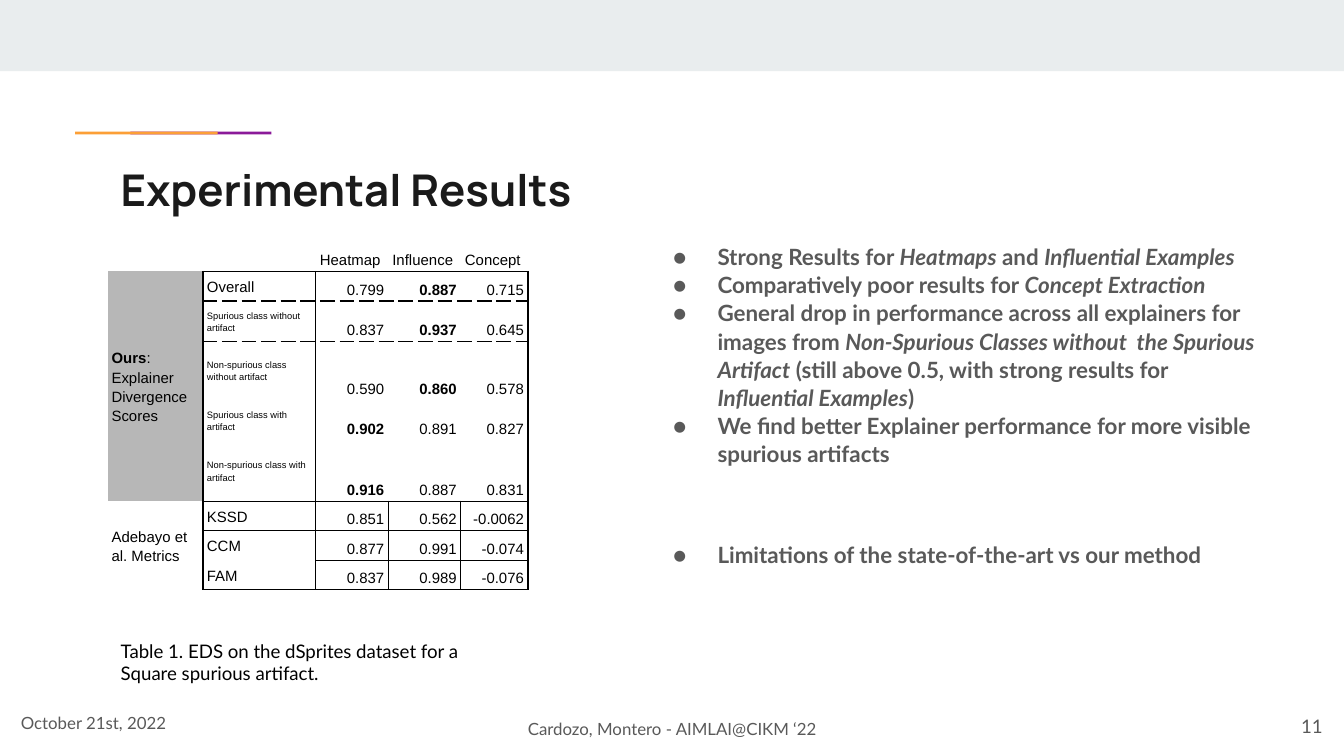
from dataclasses import dataclass
from typing import Optional

from lxml import etree
from pptx import Presentation
from pptx.dml.color import RGBColor
from pptx.enum.shapes import MSO_SHAPE
from pptx.enum.text import MSO_ANCHOR, PP_ALIGN
from pptx.oxml.ns import qn
from pptx.util import Inches, Pt

RECTANGLE = MSO_SHAPE.RECTANGLE
TOP, MIDDLE, BOTTOM = MSO_ANCHOR.TOP, MSO_ANCHOR.MIDDLE, MSO_ANCHOR.BOTTOM
LEFT, CENTER, RIGHT = PP_ALIGN.LEFT, PP_ALIGN.CENTER, PP_ALIGN.RIGHT
BLACK, GREY, INK = "000000", "595959", "1A1A1A"


@dataclass
class Run:
    text: str
    bold: bool = False
    italic: bool = False


@dataclass
class Style:
    size: float
    font: str = "Lato"
    color: str = GREY
    align: PP_ALIGN = LEFT
    anchor: MSO_ANCHOR = TOP
    spacing: float = 1.0


@dataclass
class Bar:
    left: float
    top: float
    width: float
    height: float
    color: str


@dataclass
class Label:
    left: float
    top: float
    width: float
    height: float
    run: Run
    style: Style


@dataclass
class Score:
    name: str
    values: tuple[str, str, str]
    height: float = 0.22
    best: Optional[int] = None
    size: float = 8


@dataclass
class Bullet:
    runs: list[Run]
    space_before: float = 0


BARS = [
    Bar(0, 0, 10, 0.53, "E9EDEE"),
    Bar(0.97, 0.98, 1.05, 0.02, "8B1A99"),
    Bar(0.56, 0.98, 1.06, 0.02, "FC9F36"),
]
LABELS = [
    Label(2.66, 5.27, 4.68, 0.35, Run("Cardozo, Montero - AIMLAI@CIKM ‘22"), Style(9, align=CENTER)),
    Label(-0.14, 5.23, 1.67, 0.35, Run("October 21st, 2022"), Style(9, align=CENTER)),
    Label(0.8, 1.11, 8.41, 0.59, Run("Experimental Results", bold=True), Style(23.4, "Manrope", INK)),
    Label(9.34, 5.19, 0.6, 0.43, Run("11"), Style(10, align=RIGHT, anchor=MIDDLE)),
    Label(0.8, 4.66, 3.14, 0.54,
          Run("Table 1. EDS on the dSprites dataset for a Square spurious artifact."),
          Style(10, color=BLACK)),
]
EXPLAINERS = ("Heatmap", "Influence", "Concept")
COLUMN_WIDTHS = (0.71, 0.84, 0.54, 0.54, 0.5)
HEADER_HEIGHT = 0.32
SCORES = [
    Score("Overall", ("0.799", "0.887", "0.715"), best=1),
    Score("Spurious class without artifact", ("0.837", "0.937", "0.645"), 0.3, 1, 5),
    Score("Non-spurious class without artifact", ("0.590", "0.860", "0.578"), 0.44, 1, 5),
    Score("Spurious class with artifact", ("0.902", "0.891", "0.827"), 0.3, 0, 5),
    Score("Non-spurious class with artifact", ("0.916", "0.887", "0.831"), 0.45, 0, 5),
    Score("KSSD", ("0.851", "0.562", "-0.0062")),
    Score("CCM", ("0.877", "0.991", "-0.074")),
    Score("FAM", ("0.837", "0.989", "-0.076")),
]
ADEBAYO_ROW = 6
FINDINGS = [
    Bullet([Run("Strong Results for "), Run("Heatmaps", italic=True), Run(" and "),
            Run("Influential Examples", italic=True)]),
    Bullet([Run("Comparatively poor results for "), Run("Concept Extraction", italic=True)]),
    Bullet([Run("General drop in performance across all explainers for images from "),
            Run("Non-Spurious Classes without  the Spurious Artifact", italic=True),
            Run(" (still above 0.5, with strong results for "),
            Run("Influential Examples", italic=True), Run(")")]),
    Bullet([Run("We find better Explainer performance for more visible spurious artifacts")]),
    Bullet([Run("Limitations of the state-of-the-art vs our method")], 39),
]


def rgb(value: str) -> RGBColor:
    return RGBColor.from_string(value)


def write(paragraph, runs: list[Run], style: Style) -> None:
    paragraph.alignment = style.align
    paragraph.line_spacing = style.spacing
    for part in runs:
        run = paragraph.add_run()
        run.text = part.text
        run.font.name = style.font
        run.font.size = Pt(style.size)
        run.font.bold = part.bold
        run.font.italic = part.italic
        run.font.color.rgb = rgb(style.color)


def add_bar(slide, bar: Bar) -> None:
    shape = slide.shapes.add_shape(RECTANGLE, Inches(bar.left), Inches(bar.top),
                                   Inches(bar.width), Inches(bar.height))
    shape.shadow.inherit = False
    shape.fill.solid()
    shape.fill.fore_color.rgb = rgb(bar.color)
    shape.line.fill.background()


def add_frame(slide, left: float, top: float, width: float, height: float, anchor: MSO_ANCHOR):
    frame = slide.shapes.add_textbox(Inches(left), Inches(top), Inches(width), Inches(height)).text_frame
    frame.word_wrap = True
    frame.vertical_anchor = anchor
    frame.margin_left = frame.margin_right = frame.margin_top = frame.margin_bottom = Inches(0.1)
    return frame


def add_label(slide, label: Label) -> None:
    frame = add_frame(slide, label.left, label.top, label.width, label.height, label.style.anchor)
    write(frame.paragraphs[0], [label.run], label.style)


def add_findings(slide) -> None:
    frame = add_frame(slide, 4.74, 1.7, 4.79, 3.16, TOP)
    for index, finding in enumerate(FINDINGS):
        paragraph = frame.add_paragraph() if index else frame.paragraphs[0]
        properties = paragraph._p.get_or_add_pPr()
        properties.set("marL", str(Inches(0.5)))
        properties.set("indent", str(Inches(-0.33)))
        bullet_color = etree.SubElement(properties, qn("a:buClr"))
        etree.SubElement(bullet_color, qn("a:srgbClr"), val=GREY)
        etree.SubElement(properties, qn("a:buSzPts"), val="1200")
        etree.SubElement(properties, qn("a:buFont"), typeface="Lato")
        etree.SubElement(properties, qn("a:buChar"), char="●")
        if finding.space_before:
            paragraph.space_before = Pt(finding.space_before)
        runs = [Run(part.text, True, part.italic) for part in finding.runs]
        write(paragraph, runs, Style(12, spacing=1.05))


def line_below(row: int, column: int) -> str:
    if column < 1 or row in (-1, 3, 4) or (row == 7 and column == 1):
        return ""
    return "dash" if row in (1, 2) else "solid"


def line_right(row: int, column: int) -> str:
    if row < 1 or column < 0 or (column in (2, 3) and row < ADEBAYO_ROW):
        return ""
    return "solid"


def set_borders(cell, row: int, column: int) -> None:
    properties = cell._tc.get_or_add_tcPr()
    sides = (("a:lnL", line_right(row, column - 1)), ("a:lnR", line_right(row, column)),
             ("a:lnT", line_below(row - 1, column)), ("a:lnB", line_below(row, column)))
    for position, (tag, dash) in enumerate(sides):
        line = etree.Element(qn(tag), w=str(Pt(0.75)))
        properties.insert(position, line)
        if dash:
            fill = etree.SubElement(line, qn("a:solidFill"))
            etree.SubElement(fill, qn("a:srgbClr"), val=BLACK)
            etree.SubElement(line, qn("a:prstDash"), val=dash)
        else:
            etree.SubElement(line, qn("a:noFill"))


def fill_cell(cell, runs: list[Run], size: float = 8, align: PP_ALIGN = LEFT,
              anchor: MSO_ANCHOR = MIDDLE) -> None:
    cell.vertical_anchor = anchor
    write(cell.text_frame.paragraphs[0], runs, Style(size, "Arial", BLACK, align, spacing=1.15))


def add_scores(slide) -> None:
    heights = [HEADER_HEIGHT] + [score.height for score in SCORES]
    table = slide.shapes.add_table(len(heights), len(COLUMN_WIDTHS), Inches(0.8), Inches(1.7),
                                   Inches(sum(COLUMN_WIDTHS)), Inches(sum(heights))).table
    table.first_row = table.horz_banding = False
    for column, width in enumerate(COLUMN_WIDTHS):
        table.columns[column].width = Inches(width)
    for row, height in enumerate(heights):
        table.rows[row].height = Inches(height)
        for column in range(len(COLUMN_WIDTHS)):
            cell = table.cell(row, column)
            cell.margin_left = cell.margin_right = Inches(0.03)
            cell.margin_top = cell.margin_bottom = Inches(0.02)
            cell.text_frame.paragraphs[0].font.size = Pt(8)
            cell.fill.background()
            set_borders(cell, row, column)
    for column, explainer in enumerate(EXPLAINERS, 2):
        fill_cell(table.cell(0, column), [Run(explainer)], anchor=BOTTOM)
    for row, score in enumerate(SCORES, 1):
        fill_cell(table.cell(row, 1), [Run(score.name)], score.size)
        for index, value in enumerate(score.values):
            fill_cell(table.cell(row, index + 2), [Run(value, index == score.best)], 8, RIGHT, BOTTOM)
    ours, adebayo = table.cell(1, 0), table.cell(ADEBAYO_ROW, 0)
    ours.merge(table.cell(ADEBAYO_ROW - 1, 0))
    adebayo.merge(table.cell(len(SCORES), 0))
    ours.fill.solid()
    ours.fill.fore_color.rgb = rgb("B7B7B7")
    fill_cell(ours, [Run("Ours", True), Run(": Explainer Divergence Scores")])
    fill_cell(adebayo, [Run("Adebayo et al. Metrics")])


def main() -> None:
    deck = Presentation()
    deck.slide_width = Inches(10)
    deck.slide_height = deck.slide_width * 9 // 16
    slide = deck.slides.add_slide(deck.slide_layouts[6])
    for bar in BARS:
        add_bar(slide, bar)
    for label in LABELS:
        add_label(slide, label)
    add_scores(slide)
    add_findings(slide)
    deck.save("out.pptx")


if __name__ == "__main__":
    main()
